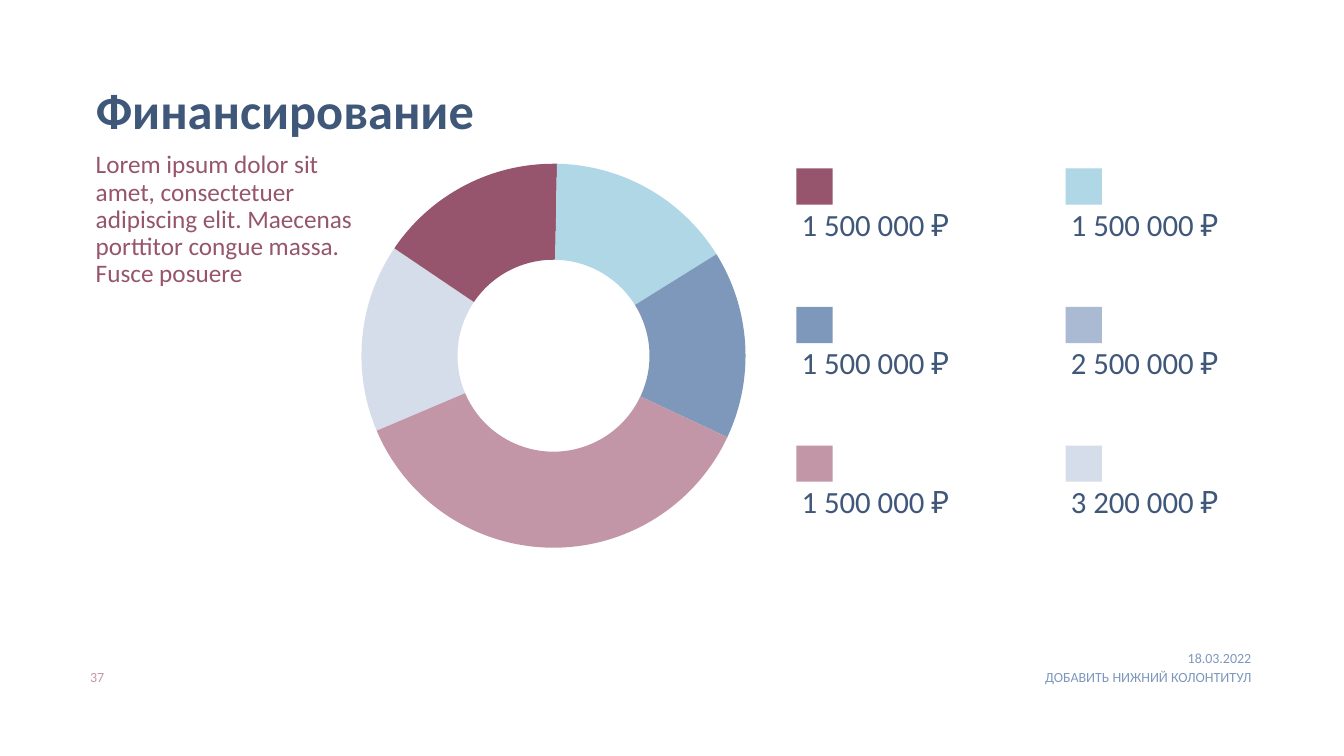
from dataclasses import dataclass

from lxml import etree
from pptx import Presentation
from pptx.chart.data import CategoryChartData
from pptx.dml.color import RGBColor
from pptx.enum.chart import XL_CHART_TYPE as ChartType
from pptx.enum.shapes import MSO_SHAPE as Preset
from pptx.enum.text import MSO_ANCHOR as Anchor, PP_ALIGN as Align
from pptx.oxml import parse_xml
from pptx.oxml.ns import nsdecls, qn
from pptx.slide import Slide
from pptx.util import Inches, Pt

FONT = "Calibri"
NAVY = RGBColor(0x3F, 0x57, 0x79)
PLUM = RGBColor(0x96, 0x55, 0x6D)
SKY = RGBColor(0xAF, 0xD7, 0xE6)
BLUE = RGBColor(0x7E, 0x98, 0xBC)
STEEL = RGBColor(0xA9, 0xBA, 0xD2)
ROSE = RGBColor(0xC3, 0x96, 0xA7)
MIST = RGBColor(0xD4, 0xDD, 0xE9)


@dataclass(frozen=True)
class Caption:
    text: str
    left: float
    top: float
    width: float
    height: float
    size: int
    color: RGBColor
    bold: bool = False
    anchor: Anchor = Anchor.TOP
    align: Align = Align.LEFT
    inset: float = 0.04
    spacing: float = 0.9


@dataclass(frozen=True)
class Fund:
    amount: str
    color: RGBColor


@dataclass(frozen=True)
class Slice:
    share: int
    color: RGBColor


CAPTIONS = [
    Caption("Финансирование", 0.91, 0.81, 6.89, 0.62, 36, NAVY,
            bold=True, anchor=Anchor.MIDDLE),
    Caption("Lorem ipsum dolor sit amet, consectetuer adipiscing elit. "
            "Maecenas porttitor congue massa. Fusce posuere",
            0.91, 1.51, 2.74, 1.78, 18, PLUM),
    Caption("37", 0.7, 6.63, 0.43, 0.26, 10, ROSE,
            align=Align.CENTER, inset=0.1, spacing=1.0),
    Caption("18.03.2022", 11.23, 6.35, 1.18, 0.26, 10, BLUE,
            anchor=Anchor.BOTTOM, align=Align.RIGHT, inset=0.1, spacing=1.0),
    Caption("ДОБАВИТЬ НИЖНИЙ КОЛОНТИТУЛ", 7.91, 6.63, 4.5, 0.26, 10, BLUE,
            align=Align.RIGHT, inset=0.1, spacing=1.0),
]

# Legend entries, row by row
FUNDS = [
    Fund("1 500 000 ₽", PLUM), Fund("1 500 000 ₽", SKY),
    Fund("1 500 000 ₽", BLUE), Fund("2 500 000 ₽", STEEL),
    Fund("1 500 000 ₽", ROSE), Fund("3 200 000 ₽", MIST),
]
LEGEND_LEFT, LEGEND_TOP = 7.9, 1.67
COLUMN_STEP, ROW_STEP = 2.67, 1.375
SWATCH = 0.36

SLICES = [Slice(16, MIST), Slice(16, PLUM), Slice(16, SKY),
          Slice(16, BLUE), Slice(37, ROSE)]
RING_WIDTH, RING_HEIGHT, RING_DIAMETER = 4.08, 4.14, 3.81


def add_caption(slide: Slide, caption: Caption) -> None:
    box = slide.shapes.add_textbox(Inches(caption.left), Inches(caption.top),
                                   Inches(caption.width), Inches(caption.height))
    frame = box.text_frame
    frame.word_wrap = True
    frame.vertical_anchor = caption.anchor
    frame.margin_left = Inches(caption.inset)
    frame.margin_top = frame.margin_right = frame.margin_bottom = 0
    paragraph = frame.paragraphs[0]
    paragraph.alignment = caption.align
    paragraph.line_spacing = caption.spacing
    run = paragraph.add_run()
    run.text = caption.text
    run.font.name = FONT
    run.font.size = Pt(caption.size)
    run.font.bold = caption.bold
    run.font.color.rgb = caption.color


def add_fund(slide: Slide, fund: Fund, row: int, column: int) -> None:
    left = LEGEND_LEFT + column * COLUMN_STEP
    top = LEGEND_TOP + row * ROW_STEP
    swatch = slide.shapes.add_shape(Preset.RECTANGLE, Inches(left), Inches(top),
                                    Inches(SWATCH), Inches(SWATCH))
    swatch.shadow.inherit = False
    swatch.fill.solid()
    swatch.fill.fore_color.rgb = fund.color
    swatch.line.fill.background()
    add_caption(slide, Caption(fund.amount, left + 0.01, top + 0.37, 2.28, 0.37,
                               22, NAVY, anchor=Anchor.BOTTOM))


def add_ring(slide: Slide) -> None:
    data = CategoryChartData()
    data.categories = [str(number) for number in range(1, len(SLICES) + 1)]
    data.add_series("Series 1", [part.share for part in SLICES])
    chart = slide.shapes.add_chart(
        ChartType.DOUGHNUT, Inches(3.45), Inches(1.46),
        Inches(RING_WIDTH), Inches(RING_HEIGHT), data).chart
    chart.has_legend = False
    chart.has_title = False
    chart.font.name = FONT
    chart.font.size = Pt(10)
    chart.font.color.rgb = NAVY
    plot = chart.plots[0]
    plot.vary_by_categories = True
    for index, part in enumerate(SLICES):
        point = plot.series[0].points[index].format
        point.fill.solid()
        point.fill.fore_color.rgb = part.color
        point.line.fill.background()

    # Rotation, hole and centred plot area
    area = chart.element.find(".//" + qn("c:plotArea"))
    ring = area.find(qn("c:doughnutChart"))
    ring.find(qn("c:firstSliceAng")).set("val", "247")
    ring.find(qn("c:holeSize")).set("val", "53")
    for old in area.findall(qn("c:layout")):
        area.remove(old)
    layout = parse_xml(f"<c:layout {nsdecls('c')}/>")
    manual = etree.SubElement(layout, qn("c:manualLayout"))
    width, height = RING_DIAMETER / RING_WIDTH, RING_DIAMETER / RING_HEIGHT
    settings = {"layoutTarget": "inner", "xMode": "edge", "yMode": "edge",
                "x": (1 - width) / 2, "y": (1 - height) / 2,
                "w": width, "h": height}
    for tag, value in settings.items():
        etree.SubElement(manual, qn(f"c:{tag}")).set("val", str(value))
    area.insert(0, layout)


def main() -> None:
    deck = Presentation()
    deck.slide_width, deck.slide_height = Inches(13.33), Inches(7.5)
    slide = deck.slides.add_slide(deck.slide_layouts[6])

    # Heading, introduction and footer
    for caption in CAPTIONS:
        add_caption(slide, caption)

    # Doughnut and its two-column legend
    add_ring(slide)
    for index, fund in enumerate(FUNDS):
        add_fund(slide, fund, *divmod(index, 2))

    deck.save("out.pptx")


if __name__ == "__main__":
    main()
